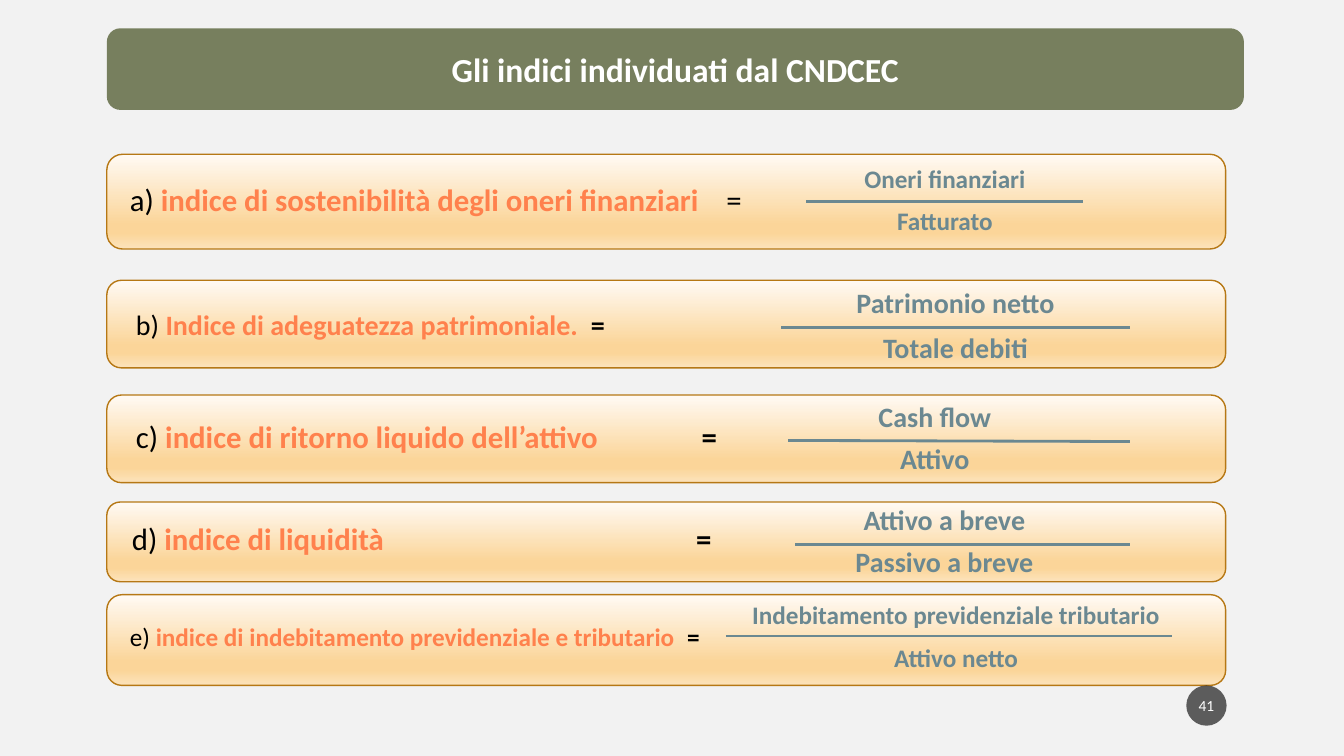
import pptx
import pptx.util
import pptx.dml.color
import pptx.enum.shapes
import pptx.enum.text
import pptx.oxml.ns
from lxml import etree

Pt = pptx.util.Pt
RGBColor = pptx.dml.color.RGBColor
qn = pptx.oxml.ns.qn
SHAPES = pptx.enum.shapes.MSO_SHAPE
ALIGN = pptx.enum.text.PP_ALIGN
ANCHOR = pptx.enum.text.MSO_ANCHOR

BACKGROUND = RGBColor(0xF2, 0xF2, 0xF2)
OLIVE = RGBColor(0x77, 0x7F, 0x5E)
OCHRE = RGBColor(0xB6, 0x78, 0x15)
CORAL = RGBColor(0xFF, 0x81, 0x4D)
SLATE = RGBColor(0x6B, 0x88, 0x91)
CHARCOAL = RGBColor(0x1D, 0x1D, 0x1D)
BLACK = RGBColor(0, 0, 0)
WHITE = RGBColor(0xFF, 0xFF, 0xFF)
CREAM_STOPS = [
    (0, RGBColor(0xFF, 0xFA, 0xF4)),
    (74, RGBColor(0xFB, 0xD5, 0x99)),
    (83, RGBColor(0xFB, 0xD5, 0x99)),
    (100, RGBColor(0xFC, 0xE3, 0xBB)),
]

FONT = "Calibri"
TITLE = "Gli indici individuati dal CNDCEC"
PAGE = "41"
CARD_LEFT, CARD_WIDTH = 76.3, 799.2
LABEL_WIDTH = 470
TITLE_BOX = (CARD_LEFT, 20.2, 812.2, 58.3)
PAGE_BOX = (847.4, 489.6, 28.8, 28.8)

INDICES = [
    dict(letter="a) ", name="indice di sostenibilità degli oneri finanziari",
         fraction=("Oneri finanziari", "Fatturato"), card=(110.2, 67.7),
         label=(85.7, 125.3), label_size=22, equals_tab=426, equals_bold=False,
         center=675, fraction_top=113, fraction_size=18, gap=8.5,
         bar=(576, 144, 773.3, 144)),
    dict(letter="b) ", name="Indice di adeguatezza patrimoniale.",
         fraction=("Patrimonio netto", "Totale debiti"), card=(200.2, 62.6),
         label=(90, 216), label_size=20, equals_tab=325, equals_bold=True,
         center=682.5, fraction_top=200.2, fraction_size=20, gap=8.5,
         bar=(558, 234, 807.1, 234)),
    dict(letter="c) ", name="indice di ritorno liquido dell’attivo",
         fraction=("Cash flow", "Attivo"), card=(282.2, 62.6),
         label=(90, 294.5), label_size=22, equals_tab=404, equals_bold=True,
         center=667.8, fraction_top=281.5, fraction_size=20, gap=6,
         bar=(563, 314.6, 807.1, 315.4)),
    dict(letter="d) ", name="indice di liquidità",
         fraction=("Attivo a breve", "Passivo a breve"), card=(358.6, 56.9),
         label=(87.1, 367.9), label_size=22, equals_tab=403, equals_bold=True,
         center=674.6, fraction_top=355.7, fraction_size=20, gap=6,
         bar=(568.1, 388.8, 807.1, 388.8)),
    dict(letter="e) ", name="indice di indebitamento previdenziale e tributario",
         fraction=("Indebitamento previdenziale tributario", "Attivo netto"),
         card=(424.8, 64.8),
         label=(85.7, 439.9), label_size=18, equals_tab=398, equals_bold=True,
         center=682.9, fraction_top=424.8, fraction_size=18, gap=8.5,
         bar=(518.4, 454.3, 837.4, 454.3)),
]


def points(values):
    return [Pt(value) for value in values]


def add_run(paragraph, text, size, color, bold=False):
    run = paragraph.add_run()
    run.text = text
    run.font.name = FONT
    run.font.size = Pt(size)
    run.font.bold = bold
    run.font.color.rgb = color


def add_panel(slide, kind, box):
    panel = slide.shapes.add_shape(kind, *points(box))
    panel.shadow.inherit = False
    return panel


def add_text_box(slide, box, wrap):
    frame = slide.shapes.add_textbox(*points(box)).text_frame
    frame.word_wrap = wrap
    return frame


def add_card(slide, index):
    top, height = index["card"]
    card = add_panel(slide, SHAPES.ROUNDED_RECTANGLE, (CARD_LEFT, top, CARD_WIDTH, height))
    card.line.color.rgb = OCHRE
    card.line.width = Pt(1)
    card.fill.gradient()
    card.fill.gradient_angle = 270
    stop_list = card.element.spPr.find(".//" + qn("a:gsLst"))
    for stop in list(stop_list):
        stop_list.remove(stop)
    for percent, color in CREAM_STOPS:
        stop = etree.SubElement(stop_list, qn("a:gs"), pos=str(percent * 1000))
        etree.SubElement(stop, qn("a:srgbClr"), val=str(color))


def add_label(slide, index):
    size = index["label_size"]
    box = (*index["label"], LABEL_WIDTH, size * 1.22 + 7.2)
    paragraph = add_text_box(slide, box, True).paragraphs[0]
    properties = paragraph._p.get_or_add_pPr()
    tabs = etree.SubElement(properties, qn("a:tabLst"))
    etree.SubElement(tabs, qn("a:tab"), pos=str(Pt(index["equals_tab"])), algn="l")
    add_run(paragraph, index["letter"], size, BLACK)
    add_run(paragraph, index["name"], size, CORAL, True)
    add_run(paragraph, "\t=", size, BLACK, index["equals_bold"])


def add_fraction(slide, index):
    size, width = index["fraction_size"], 346
    height = 2 * size * 1.22 + index["gap"] + 7.2
    box = (index["center"] - width / 2, index["fraction_top"], width, height)
    frame = add_text_box(slide, box, False)
    numerator, denominator = frame.paragraphs[0], frame.add_paragraph()
    denominator.space_before = Pt(index["gap"])
    for paragraph, text in zip((numerator, denominator), index["fraction"]):
        paragraph.alignment = ALIGN.CENTER
        add_run(paragraph, text, size, SLATE, True)
    bar = slide.shapes.add_connector(
        pptx.enum.shapes.MSO_CONNECTOR.STRAIGHT, *points(index["bar"]))
    bar.line.color.rgb = SLATE
    bar.line.width = Pt(2)
    etree.SubElement(bar.element.spPr, qn("a:effectLst"))


def add_title(slide):
    banner = add_panel(slide, SHAPES.ROUNDED_RECTANGLE, TITLE_BOX)
    banner.fill.solid()
    banner.fill.fore_color.rgb = OLIVE
    banner.line.fill.background()
    title = slide.shapes.title
    title.left, title.top, title.width, title.height = points(TITLE_BOX)
    title.text_frame.vertical_anchor = ANCHOR.MIDDLE
    paragraph = title.text_frame.paragraphs[0]
    paragraph.alignment = ALIGN.CENTER
    add_run(paragraph, TITLE, 24, WHITE, True)
    title.element.getparent().append(title.element)


def add_page_number(slide):
    badge = add_panel(slide, SHAPES.OVAL, PAGE_BOX)
    badge.fill.solid()
    badge.fill.fore_color.rgb = CHARCOAL
    color = badge.element.spPr.find(qn("a:solidFill"))[0]
    etree.SubElement(color, qn("a:alpha"), val="70000")
    badge.line.fill.background()
    frame = badge.text_frame
    frame.margin_left = frame.margin_right = Pt(1.4)
    frame.vertical_anchor = ANCHOR.MIDDLE
    paragraph = frame.paragraphs[0]
    paragraph.alignment = ALIGN.CENTER
    add_run(paragraph, PAGE, 11, WHITE)


def main():
    presentation = pptx.Presentation()
    presentation.slide_width, presentation.slide_height = Pt(960), Pt(540)
    slide = presentation.slides.add_slide(presentation.slide_layouts[5])
    slide.background.fill.solid()
    slide.background.fill.fore_color.rgb = BACKGROUND
    for index in reversed(INDICES):
        add_card(slide, index)
    add_page_number(slide)
    add_title(slide)
    for index in INDICES:
        add_label(slide, index)
        add_fraction(slide, index)
    presentation.save("out.pptx")


if __name__ == "__main__":
    main()
